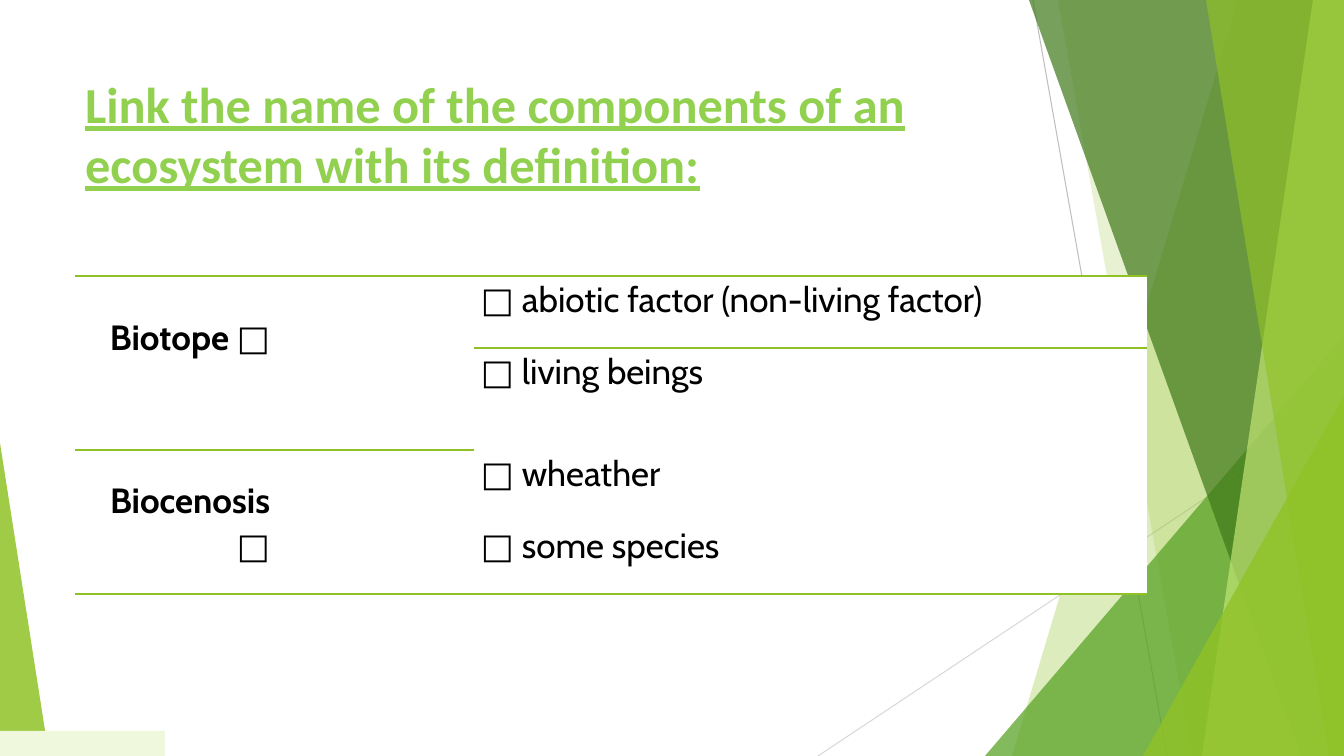
from lxml import etree
from pptx import Presentation
from pptx import util as u
from pptx.dml.color import RGBColor
from pptx.enum import shapes, text
from pptx.oxml.ns import qn

# Content
HEADING = "Link the name of the components of an ecosystem with its definition:"
# Component, first row, room kept free below the text
COMPONENTS = [("Biotope □", 0, 54), ("Biocenosis □", 2, 0)]
DEFINITIONS = ["□ abiotic factor (non-living factor)", "□ living beings",
               "□ wheather", "□ some species"]
COLUMNS = [399, 673]
ROWS = [72, 102, 72, 72]
ROW_SPAN = 2
TABLE_LEFT, TABLE_TOP = 75, 276
# Ruled lines: (row the line lies above, column)
RULED = {(0, 0), (0, 1), (1, 1), (2, 0), (4, 0), (4, 1)}

GREEN, BLACK, WHITE = "90C226", "000000", "FFFFFF"
WIDTH, HEIGHT = 1344, 756
RAYS = [((1033, 0), (1167, HEIGHT), "BFBFBF"),
        ((WIDTH, 406), (818, HEIGHT), "D9D9D9")]
# Facets reach the right edge: (top x, bottom x)
# Triangles: (left, top, width, position of the tip)
BACKDROP = [
    ("facet", (1238, 1012), GREEN, 30),
    ("facet", (1058, 1192), GREEN, 20),
    ("triangle", (985, 336, 359, 1), "54A021", 72),
    ("facet", (1029, 1301), "3F7819", 70),
    ("facet", (1313, 1202), "C0E474", 70),
    ("facet", (1206, 1329), GREEN, 65),
    ("triangle", (1143, 396, 201, 1), GREEN, 80),
    ("triangle", (0, 443, 49, 0), GREEN, 85),
]
SCALE = 914400 / 100.8


def px(length):
    return u.Emu(round(length * SCALE))


def colour(hex_code):
    return RGBColor.from_string(hex_code)


def write(frame, words, size, font, ink=BLACK, bold=False, underline=False,
          align=text.PP_ALIGN.LEFT, spacing=1.0, after=0):
    frame.word_wrap = True
    paragraph = frame.paragraphs[0]
    paragraph.alignment = align
    paragraph.line_spacing = spacing
    paragraph.space_before, paragraph.space_after = u.Pt(0), u.Pt(after)
    run = paragraph.add_run()
    run.text = words
    run.font.size, run.font.name = u.Pt(size), font
    run.font.bold, run.font.underline = bold, underline
    run.font.color.rgb = colour(ink)


def paint(shape, fill, opacity=100):
    shape.shadow.inherit = False
    shape.fill.solid()
    shape.fill.fore_color.rgb = colour(fill)
    shape.line.fill.background()
    if opacity < 100:
        tint = shape.fill._xPr.find(".//" + qn("a:srgbClr"))
        etree.SubElement(tint, qn("a:alpha"), val=str(opacity * 1000))


def rule_cell(cell, top, bottom):
    props = cell._tc.get_or_add_tcPr()
    for side, ruled in (("L", False), ("R", False), ("T", top), ("B", bottom)):
        edge = etree.SubElement(props, qn("a:ln" + side), w=str(u.Pt(1)))
        if ruled:
            fill = etree.SubElement(edge, qn("a:solidFill"))
            etree.SubElement(fill, qn("a:srgbClr"), val=GREEN)
        else:
            etree.SubElement(edge, qn("a:noFill"))


def draw_backdrop(slide):
    for start, end, ink in RAYS:
        ray = slide.shapes.add_connector(
            shapes.MSO_CONNECTOR.STRAIGHT, *map(px, start + end))
        ray.line.color.rgb = colour(ink)
        ray.line.width = u.Pt(0.75)
        etree.SubElement(ray._element.spPr, qn("a:effectLst"))
    for kind, place, fill, opacity in BACKDROP:
        if kind == "facet":
            top_x, bottom_x = place
            outline = slide.shapes.build_freeform(top_x, 0, scale=SCALE)
            outline.add_line_segments(
                [(WIDTH, 0), (WIDTH, HEIGHT), (bottom_x, HEIGHT)], close=True)
            piece = outline.convert_to_shape()
        else:
            left, top, width, tip = place
            piece = slide.shapes.add_shape(
                shapes.MSO_SHAPE.ISOSCELES_TRIANGLE,
                *map(px, (left, top, width, HEIGHT - top)))
            piece.adjustments[0] = tip
        paint(piece, fill, opacity)
    strip = slide.shapes.add_shape(
        shapes.MSO_SHAPE.RECTANGLE, *map(px, (0, 731, 165, 25)))
    paint(strip, "EFF8DC")


def draw_matching_table(slide):
    table = slide.shapes.add_table(
        len(ROWS), len(COLUMNS),
        *map(px, (TABLE_LEFT, TABLE_TOP, sum(COLUMNS), sum(ROWS)))).table
    table.first_row = table.horz_banding = False
    for column, width in zip(table.columns, COLUMNS):
        column.width = px(width)
    for row, height in zip(table.rows, ROWS):
        row.height = px(height)

    # Components, each beside two definitions
    for component, first, room_below in COMPONENTS:
        cell = table.cell(first, 0)
        cell.merge(table.cell(first + ROW_SPAN - 1, 0))
        write(cell.text_frame, component, 25, "Cabin", bold=True,
              align=text.PP_ALIGN.RIGHT, spacing=1.07, after=8)
        cell.vertical_anchor = text.MSO_ANCHOR.MIDDLE
        cell.margin_left, cell.margin_right = px(7), px(204)
        cell.margin_top, cell.margin_bottom = 0, px(room_below)

    # Definitions
    for r, definition in enumerate(DEFINITIONS):
        cell = table.cell(r, 1)
        write(cell.text_frame, definition, 25, "Cabin",
              align=text.PP_ALIGN.JUSTIFY, spacing=1.07, after=8)
        cell.margin_left = cell.margin_right = px(7)
        cell.margin_top = cell.margin_bottom = 0

    # Lines and fills
    for r in range(len(ROWS)):
        for c in range(len(COLUMNS)):
            cell = table.cell(r, c)
            below = r + (ROW_SPAN if cell.is_merge_origin else 1)
            rule_cell(cell, (r, c) in RULED, (below, c) in RULED)
            cell.fill.solid()
            cell.fill.fore_color.rgb = colour(WHITE)


def main():
    deck = Presentation()
    deck.slide_width, deck.slide_height = px(WIDTH), px(HEIGHT)
    slide = deck.slides.add_slide(deck.slide_layouts[5])

    # Title
    title = slide.shapes.title
    title.left, title.top, title.width, title.height = map(
        px, (75, 68, 985, 145))
    title.text_frame.vertical_anchor = text.MSO_ANCHOR.TOP
    write(title.text_frame, HEADING, 36, "Calibri", ink="92D050",
          bold=True, underline=True)

    draw_backdrop(slide)
    draw_matching_table(slide)
    deck.save("out.pptx")


if __name__ == "__main__":
    main()
